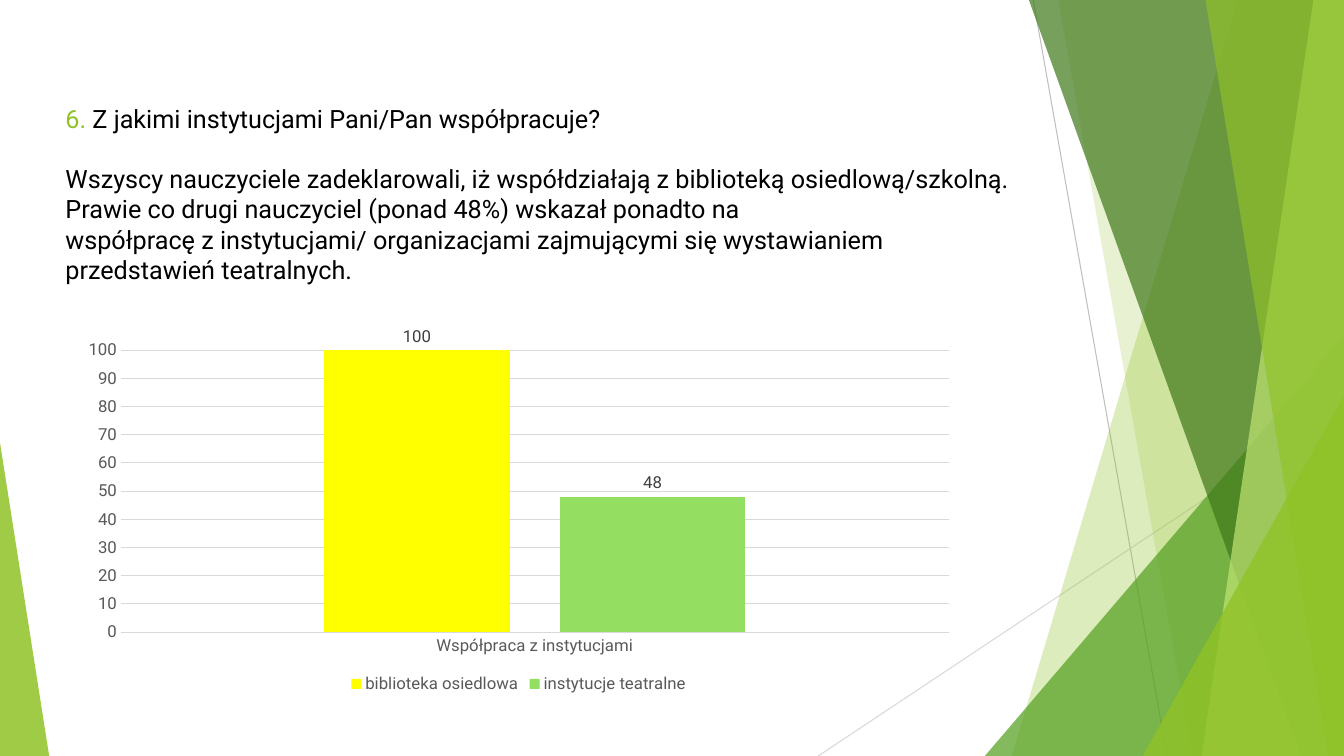
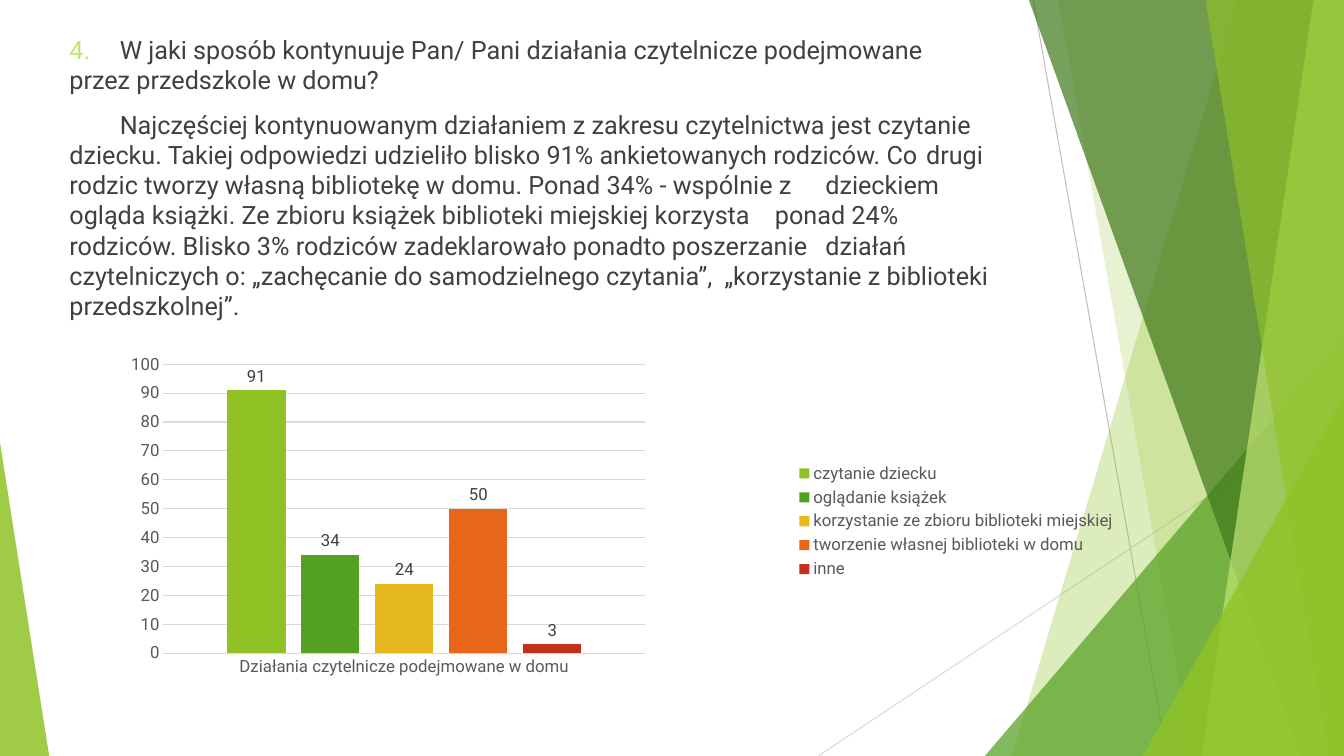
from dataclasses import dataclass

from lxml.etree import SubElement
from pptx import Presentation
from pptx.chart.chart import Chart
from pptx.chart.data import CategoryChartData
from pptx.dml.color import RGBColor
from pptx.enum.chart import XL_CHART_TYPE, XL_LABEL_POSITION, XL_LEGEND_POSITION, XL_TICK_MARK
from pptx.enum.shapes import MSO_CONNECTOR, MSO_SHAPE
from pptx.enum.text import MSO_ANCHOR
from pptx.oxml.ns import qn
from pptx.oxml.xmlchemy import OxmlElement
from pptx.shapes.autoshape import Shape
from pptx.slide import Slide
from pptx.text.text import Font
from pptx.util import Cm, Pt

WIDTH, HEIGHT = 33.87, 19.05
FONT = "Roboto"
TAB_STEP = 1.27

BLACK = RGBColor(0x00, 0x00, 0x00)
CHARCOAL = RGBColor(0x40, 0x40, 0x40)
GRAY = RGBColor(0x59, 0x59, 0x59)
SILVER = RGBColor(0xBF, 0xBF, 0xBF)
PALE_GRAY = RGBColor(0xD9, 0xD9, 0xD9)
LIME = RGBColor(0x90, 0xC2, 0x26)
PALE_LIME = RGBColor(0xC0, 0xE4, 0x74)
GREEN = RGBColor(0x54, 0xA0, 0x21)
DARK_GREEN = RGBColor(0x3F, 0x78, 0x19)
LIGHT_GREEN = RGBColor(0x94, 0xDE, 0x61)
YELLOW = RGBColor(0xFF, 0xFF, 0x00)
GOLD = RGBColor(0xE6, 0xB9, 0x1E)
ORANGE = RGBColor(0xE7, 0x66, 0x18)
RED = RGBColor(0xC4, 0x2F, 0x1A)


@dataclass(frozen=True)
class Frame:
    left: float
    top: float
    width: float
    height: float

    def lengths(self) -> tuple[Cm, Cm, Cm, Cm]:
        return Cm(self.left), Cm(self.top), Cm(self.width), Cm(self.height)


@dataclass(frozen=True)
class Ray:
    start: tuple[float, float]
    end: tuple[float, float]
    color: RGBColor


@dataclass(frozen=True)
class Facet:
    """A full-height area from a slanted left edge to the slide's right edge."""
    top_x: float
    bottom_x: float
    color: RGBColor
    opacity: int


@dataclass(frozen=True)
class Triangle:
    frame: Frame
    apex: float
    color: RGBColor
    opacity: int


@dataclass(frozen=True)
class Span:
    text: str
    color: RGBColor


@dataclass(frozen=True)
class Paragraph:
    spans: tuple[Span, ...]
    space_before: float = 0


@dataclass(frozen=True)
class Bar:
    name: str
    value: int
    color: RGBColor


@dataclass(frozen=True)
class ChartPanel:
    frame: Frame
    category: str
    bars: tuple[Bar, ...]
    legend: XL_LEGEND_POSITION
    plot_area: Frame | None = None  # fractions of the chart


@dataclass(frozen=True)
class SurveyPage:
    text_frame: Frame
    top_margin: float
    paragraphs: tuple[Paragraph, ...]
    chart: ChartPanel


RAYS = (
    Ray((26.04, 0), (29.41, HEIGHT), SILVER),
    Ray((WIDTH, 10.24), (20.62, HEIGHT), PALE_GRAY),
)
FACETS = (
    Facet(31.19, 25.5, LIME, 30),
    Facet(26.67, 30.05, LIME, 20),
    Triangle(Frame(24.82, 8.46, 9.05, 10.59), 1, GREEN, 72),
    Facet(25.93, 32.79, DARK_GREEN, 70),
    Facet(33.1, 30.28, PALE_LIME, 70),
    Facet(30.38, 33.48, LIME, 65),
    Triangle(Frame(28.8, 9.98, 5.07, 9.07), 1, LIME, 80),
    Triangle(Frame(0, 11.15, 1.24, 7.9), 0, LIME, 85),
)

PAGES = (
    SurveyPage(
        Frame(1.4, 1.7, 24.36, 7.19), 0.9,
        (
            Paragraph((Span("6.", LIME), Span(" Z jakimi instytucjami Pani/Pan współpracuje?", BLACK))),
            Paragraph((Span(
                "Wszyscy nauczyciele zadeklarowali, iż współdziałają z biblioteką "
                "osiedlową/szkolną. Prawie co drugi nauczyciel (ponad 48%) wskazał ponadto na\n"
                "współpracę z instytucjami/ organizacjami zajmującymi się wystawianiem "
                "przedstawień teatralnych.", BLACK),), 21.5),
        ),
        ChartPanel(
            Frame(1.78, 8.23, 22.58, 9.35), "Współpraca z instytucjami",
            (Bar("biblioteka osiedlowa", 100, YELLOW), Bar("instytucje teatralne", 48, LIGHT_GREEN)),
            XL_LEGEND_POSITION.BOTTOM),
    ),
    SurveyPage(
        Frame(1.5, 0.74, 23.88, 16.18), 0.13,
        (
            Paragraph((
                Span("4. ", PALE_LIME),
                Span("\tW jaki sposób kontynuuje Pan/ Pani działania czytelnicze podejmowane "
                     "\tprzez przedszkole w domu?", CHARCOAL))),
            Paragraph((Span(
                "\tNajczęściej kontynuowanym działaniem z zakresu czytelnictwa jest czytanie "
                "\tdziecku. Takiej odpowiedzi udzieliło blisko 91% ankietowanych rodziców. Co "
                "\tdrugi rodzic tworzy własną bibliotekę w domu. Ponad 34% - wspólnie z "
                "\tdzieckiem ogląda książki. Ze zbioru książek biblioteki miejskiej korzysta "
                "\tponad 24% rodziców. Blisko 3% rodziców zadeklarowało ponadto poszerzanie "
                "\tdziałań czytelniczych o: „zachęcanie do samodzielnego czytania”, "
                "\t„korzystanie z biblioteki przedszkolnej”.", CHARCOAL),), 10),
        ),
        ChartPanel(
            Frame(2.57, 8.64, 25.83, 8.99), "Działania czytelnicze podejmowane w domu",
            (
                Bar("czytanie dziecku", 91, LIME),
                Bar("oglądanie książek", 34, GREEN),
                Bar("korzystanie ze zbioru biblioteki miejskiej", 24, GOLD),
                Bar("tworzenie własnej biblioteki w domu", 50, ORANGE),
                Bar("inne", 3, RED),
            ),
            XL_LEGEND_POSITION.RIGHT, Frame(0.06, 0.06, 0.47, 0.81)),
    ),
)


def set_font(font: Font, size: float, color: RGBColor) -> None:
    font.name, font.size = FONT, Pt(size)
    font.color.rgb = color


def paint(shape: Shape, color: RGBColor, opacity: int) -> None:
    shape.shadow.inherit = False
    shape.line.fill.background()
    shape.fill.solid()
    shape.fill.fore_color.rgb = color
    swatch = shape.element.spPr.find(f"{qn('a:solidFill')}/{qn('a:srgbClr')}")
    SubElement(swatch, qn("a:alpha"), val=str(opacity * 1000))


def draw_ray(page: Slide, ray: Ray) -> None:
    points = [Cm(value) for value in ray.start + ray.end]
    connector = page.shapes.add_connector(MSO_CONNECTOR.STRAIGHT, *points)
    connector.line.color.rgb = ray.color
    connector.line.width = Pt(0.75)
    SubElement(connector.element.find(qn("p:spPr")), qn("a:effectLst"))


def draw_facet(page: Slide, facet: Facet) -> None:
    builder = page.shapes.build_freeform(Cm(facet.top_x), Cm(0))
    corners = ((WIDTH, 0), (WIDTH, HEIGHT), (facet.bottom_x, HEIGHT))
    builder.add_line_segments([(Cm(x), Cm(y)) for x, y in corners])
    paint(builder.convert_to_shape(), facet.color, facet.opacity)


def draw_triangle(page: Slide, triangle: Triangle) -> None:
    shape = page.shapes.add_shape(MSO_SHAPE.ISOSCELES_TRIANGLE, *triangle.frame.lengths())
    shape.adjustments[0] = triangle.apex
    paint(shape, triangle.color, triangle.opacity)


def draw_background(page: Slide) -> None:
    for ray in RAYS:
        draw_ray(page, ray)
    for facet in FACETS:
        if isinstance(facet, Facet):
            draw_facet(page, facet)
        else:
            draw_triangle(page, facet)


def draw_text(page: Slide, survey: SurveyPage) -> None:
    box = page.shapes.add_textbox(*survey.text_frame.lengths())
    frame = box.text_frame
    frame.word_wrap = True
    frame.vertical_anchor = MSO_ANCHOR.TOP
    frame.margin_top = Cm(survey.top_margin)
    for index, paragraph in enumerate(survey.paragraphs):
        para = frame.add_paragraph() if index else frame.paragraphs[0]
        para.space_before = Pt(paragraph.space_before)
        tabs = SubElement(para._p.get_or_add_pPr(), qn("a:tabLst"))
        for stop in range(1, int(survey.text_frame.width / TAB_STEP) + 1):
            SubElement(tabs, qn("a:tab"), pos=str(Cm(stop * TAB_STEP)), algn="l")
        for span in paragraph.spans:
            for line_number, line in enumerate(span.text.split("\n")):
                if line_number:
                    para.add_line_break()
                run = para.add_run()
                run.text = line
                set_font(run.font, 18, span.color)


def place_plot_area(chart: Chart, area: Frame) -> None:
    plot_area = chart.element.find(f".//{qn('c:plotArea')}")
    for old_layout in plot_area.findall(qn("c:layout")):
        plot_area.remove(old_layout)
    layout = OxmlElement("c:layout")
    plot_area.insert(0, layout)
    manual = SubElement(layout, qn("c:manualLayout"))
    settings = (
        ("layoutTarget", "inner"), ("xMode", "edge"), ("yMode", "edge"),
        ("x", area.left), ("y", area.top), ("w", area.width), ("h", area.height),
    )
    for name, value in settings:
        SubElement(manual, qn(f"c:{name}"), val=str(value))


def style_axes(chart: Chart) -> None:
    for axis in (chart.category_axis, chart.value_axis):
        axis.major_tick_mark = axis.minor_tick_mark = XL_TICK_MARK.NONE
        set_font(axis.tick_labels.font, 12, GRAY)
    scale = chart.value_axis
    scale.minimum_scale, scale.maximum_scale, scale.major_unit = 0, 100, 10
    scale.has_major_gridlines = True
    scale.format.line.fill.background()
    for line in (chart.category_axis.format.line, scale.major_gridlines.format.line):
        line.color.rgb = PALE_GRAY
        line.width = Pt(0.75)


def draw_chart(page: Slide, panel: ChartPanel) -> None:
    data = CategoryChartData()
    data.categories = [panel.category]
    for bar in panel.bars:
        data.add_series(bar.name, [bar.value])
    chart = page.shapes.add_chart(
        XL_CHART_TYPE.COLUMN_CLUSTERED, *panel.frame.lengths(), data).chart
    set_font(chart.font, 10, BLACK)
    chart.has_title = False
    chart.has_legend = True
    chart.legend.position = panel.legend
    chart.legend.include_in_layout = False
    set_font(chart.legend.font, 12, GRAY)
    style_axes(chart)
    plot = chart.plots[0]
    plot.vary_by_categories = False
    plot.gap_width, plot.overlap = 219, -27
    for bar, series in zip(panel.bars, plot.series):
        series.format.fill.solid()
        series.format.fill.fore_color.rgb = bar.color
        labels = series.data_labels
        labels.show_value = True
        labels.position = XL_LABEL_POSITION.OUTSIDE_END
        set_font(labels.font, 12, CHARCOAL)
    if panel.plot_area:
        place_plot_area(chart, panel.plot_area)


def main() -> None:
    deck = Presentation()
    deck.slide_width, deck.slide_height = Cm(WIDTH), Cm(HEIGHT)
    blank = deck.slide_layouts[6]
    for survey in PAGES:
        page = deck.slides.add_slide(blank)
        draw_background(page)
        draw_text(page, survey)
        draw_chart(page, survey.chart)
    deck.save("out.pptx")


if __name__ == "__main__":
    main()
